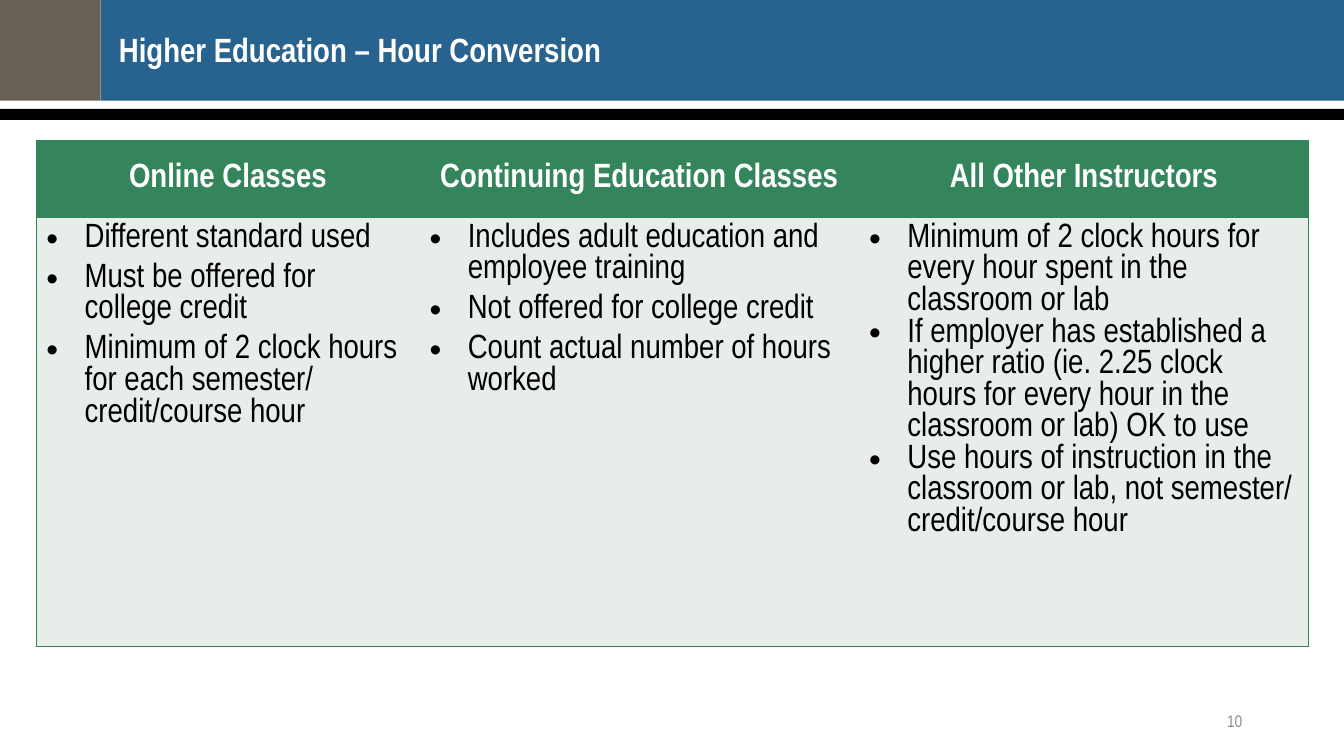
import pptx
import pptx.util
import pptx.dml.color
import pptx.enum.shapes
import pptx.enum.text
import pptx.oxml
import pptx.oxml.ns
from lxml import etree

RGB = pptx.dml.color.RGBColor
ALIGN = pptx.enum.text.PP_ALIGN
ANCHOR = pptx.enum.text.MSO_ANCHOR
qn = pptx.oxml.ns.qn

SCALE = 9144
FACE = "Arial Narrow"
BLUE = RGB(0x28, 0x62, 0x8E)
BROWN = RGB(0x69, 0x60, 0x57)
GREEN = RGB(0x34, 0x85, 0x5B)
PALE = RGB(0xE8, 0xED, 0xEA)
GREY = RGB(0x8C, 0x8C, 0x8C)
BLACK = RGB(0, 0, 0)
WHITE = RGB(0xFF, 0xFF, 0xFF)

TITLE = "Higher Education – Hour Conversion"
COLUMNS = [
    ("Online Classes", 380, 1, 6, [
        "Different standard used",
        "Must be offered for college credit",
        "Minimum of 2 clock hours for each semester/ credit/course hour"]),
    ("Continuing Education Classes", 436, 1, 6, [
        "Includes adult education and employee training",
        "Not offered for college credit",
        "Count actual number of hours worked"]),
    ("All Other Instructors", 446, 2, 0, [
        "Minimum of 2 clock hours for every hour spent in the classroom or lab",
        "If employer has established a higher ratio (ie. 2.25 clock hours "
        "for every hour in the classroom or lab) OK to use",
        "Use hours of instruction in the classroom or lab, "
        "not semester/ credit/course hour"]),
]


def px(count):
    """Turn px into EMU."""
    return pptx.util.Emu(count * SCALE)


def style(para, size, color, bold=False):
    """Set the font of a paragraph."""
    font = para.font
    font.name, font.size, font.bold = FACE, pptx.util.Pt(size), bold
    font.color.rgb = color


def bar(slide, box, color):
    """Draw a plain filled bar."""
    shape = slide.shapes.add_shape(
        pptx.enum.shapes.MSO_SHAPE.RECTANGLE, *map(px, box))
    shape.shadow.inherit = False
    shape.fill.solid()
    shape.fill.fore_color.rgb = color
    shape.line.fill.background()


def label(slide, box, text, size, color, bold=False):
    """Add a wrapped text box and return its frame."""
    frame = slide.shapes.add_textbox(*map(px, box)).text_frame
    frame.word_wrap = True
    frame.text = text
    style(frame.paragraphs[0], size, color, bold)
    return frame


def header(slide, box):
    """Draw the title band with its square and rule."""
    left, top, width, height = box
    bar(slide, (left + height, top, width - height, height), BLUE)
    bar(slide, (left, top, height, height), BROWN)
    bar(slide, (left, top + height + 8, width, 11), BLACK)
    frame = label(slide, (left + height + 18, top + 33, 1123, 56),
                  TITLE, 24, WHITE, True)
    frame.margin_left = frame.margin_right = 0
    frame.margin_top = frame.margin_bottom = 0
    frame.paragraphs[0].line_spacing = 0.9


def border(cell, sides):
    """Line the given sides of a cell and clear the others."""
    props = cell._tc.get_or_add_tcPr()
    for side in "LRTB":
        line = etree.SubElement(props, qn("a:ln" + side), w="12700")
        if side in sides:
            fill = etree.SubElement(line, qn("a:solidFill"))
            etree.SubElement(fill, qn("a:srgbClr"), val=str(GREEN))
        else:
            etree.SubElement(line, qn("a:noFill"))


def paint(cell, sides, color):
    """Give a cell its borders and fill."""
    border(cell, sides)
    cell.fill.solid()
    cell.fill.fore_color.rgb = color


def bullets(frame, items, level, gap):
    """Fill a cell with a bulleted list."""
    for i, item in enumerate(items):
        para = frame.paragraphs[0] if i == 0 else frame.add_paragraph()
        para.text = item
        para.level = level
        para.space_before = pptx.util.Pt(gap if i else 0)
        props = para._p.get_or_add_pPr()
        props.set("marL", str(px(38)))
        props.set("indent", str(px(-38)))
        etree.SubElement(props, qn("a:buFont"), typeface="Arial")
        etree.SubElement(props, qn("a:buChar"), char="•")
        style(para, 24, BLACK)


def classes(slide, box):
    """Build the table of class types."""
    table = slide.shapes.add_table(2, len(COLUMNS), *map(px, box)).table
    table.rows[0].height = px(77)
    table.rows[1].height = px(box[3] - 77)
    last = len(COLUMNS) - 1
    for i, (name, width, level, gap, items) in enumerate(COLUMNS):
        table.columns[i].width = px(width)
        sides = "TB" + ("L" if i == 0 else "") + ("R" if i == last else "")
        head, body = table.cell(0, i), table.cell(1, i)
        paint(head, sides, GREEN)
        paint(body, sides, PALE)
        head.vertical_anchor = ANCHOR.MIDDLE
        head.text = name
        para = head.text_frame.paragraphs[0]
        para.alignment = ALIGN.CENTER
        style(para, 24, WHITE, True)
        bullets(body.text_frame, items, level, gap)


def footer(slide, box):
    """Place the page number."""
    frame = label(slide, box, "10", 12, GREY)
    frame.vertical_anchor = ANCHOR.MIDDLE
    frame.paragraphs[0].alignment = ALIGN.RIGHT


def main():
    """Build and save the slide."""
    deck = pptx.Presentation()
    deck.slide_width, deck.slide_height = px(1333), px(750)
    slide = deck.slides.add_slide(deck.slide_layouts[6])
    header(slide, (0, 0, 1333, 100))
    classes(slide, (36, 139, 1262, 502))
    footer(slide, (942, 695, 300, 40))
    deck.save("out.pptx")


if __name__ == "__main__":
    main()
